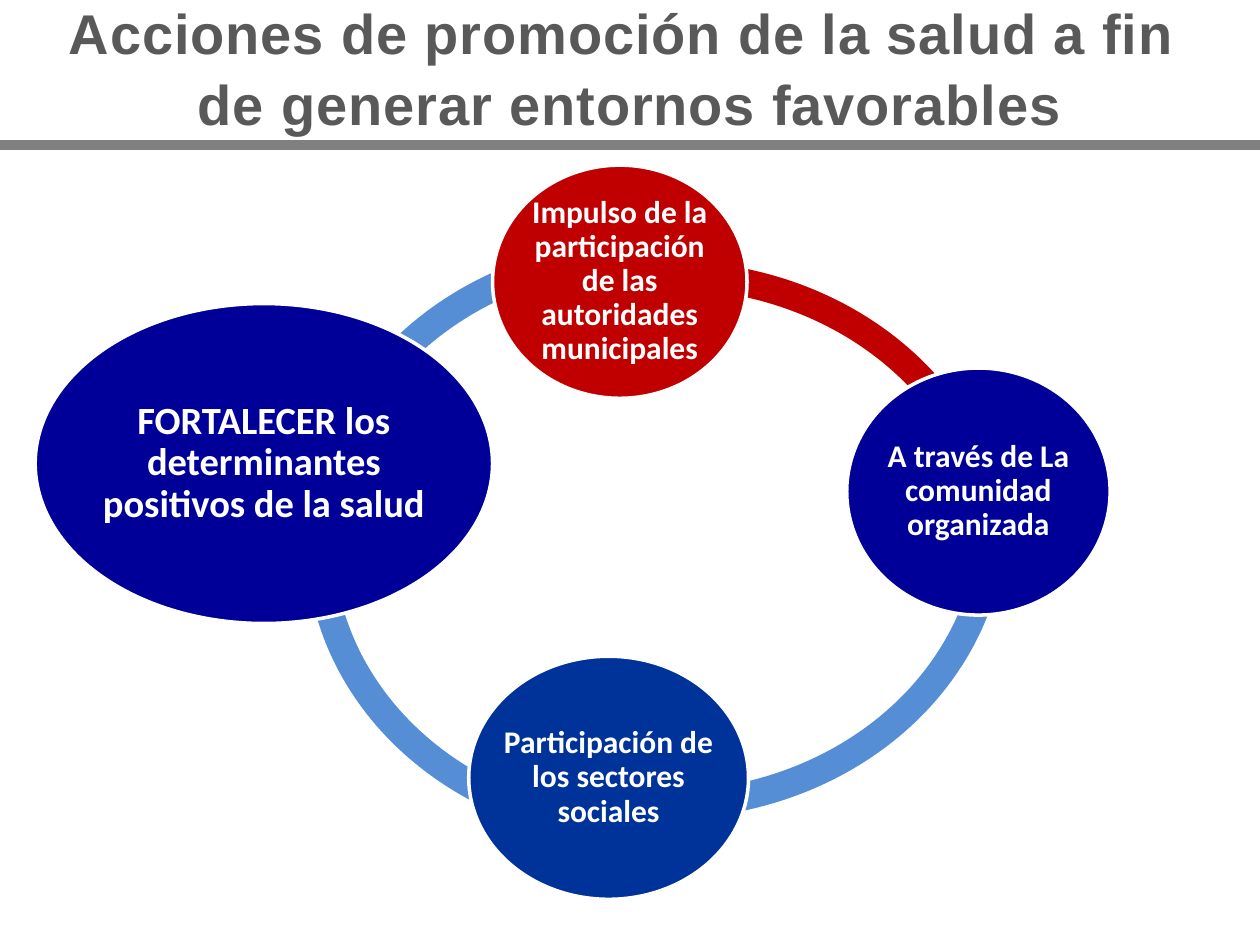
import lxml.etree
import pptx
import pptx.dml.color
import pptx.enum.shapes
import pptx.enum.text
import pptx.oxml.ns
import pptx.util

Cm, Pt = pptx.util.Cm, pptx.util.Pt
SHAPE = pptx.enum.shapes.MSO_SHAPE

THEME = {
    "white": "FFFFFF", "title": "595959", "rule": "808080",
    "sky": "558ED5", "red": "C00000", "navy": "000099", "blue": "003399",
    "title_font": "Arial", "title_size": 32,
    "node_font": "Calibri", "large": 22, "normal": 18,
}

TITLE = ["Acciones de promoción de la salud a fin ", "de generar entornos favorables"]

# Left and top in cm, start and end in degrees clockwise from the right, colour
ARCS = [
    (6.17, 4.83, 121.64, 256.49, "sky"),
    (6.5, 4.32, 0.25, 105.04, "sky"),
    (6.58, 5.26, 271.26, 352.1, "red"),
]
ARC_SIZE = (13.79, 12.19)
ARC_THICKNESS = 0.046

# Text, box (left, top, width, height in cm), colour, type size
NODES = [
    ("FORTALECER los determinantes positivos de la salud",
     (0.71, 6.12, 9.22, 6.45), "navy", "large"),
    ("Impulso de la participación de las autoridades municipales",
     (9.93, 3.33, 5.13, 4.7), "red", "normal"),
    ("A través de La comunidad organizada",
     (17.07, 7.42, 5.31, 4.98), "navy", "normal"),
    ("Participación de los sectores sociales",
     (9.45, 13.23, 5.64, 4.9), "blue", "normal"),
]
NODE_MARGIN = -0.2  # lets text run slightly past the oval's inscribed rectangle


def color(name):
    return pptx.dml.color.RGBColor.from_string(THEME[name])


def add_filled(slide, preset, box, fill, outline=None, outline_width=0):
    shape = slide.shapes.add_shape(preset, *(Cm(length) for length in box))
    shape.shadow.inherit = False
    shape.fill.solid()
    shape.fill.fore_color.rgb = color(fill)
    if outline:
        shape.line.color.rgb = color(outline)
        shape.line.width = Pt(outline_width)
    else:
        shape.line.fill.background()
    return shape


def style(paragraph, font_name, size, font_color):
    paragraph.alignment = pptx.enum.text.PP_ALIGN.CENTER
    font = paragraph.font
    font.name, font.size, font.bold = font_name, Pt(size), True
    font.color.rgb = color(font_color)


def add_arc(slide, left, top, start, end, fill):
    arc = add_filled(slide, SHAPE.BLOCK_ARC, (left, top, *ARC_SIZE), fill)
    # Angles are stored in 60000ths of a degree, adjustments in 100000ths
    for index, value in enumerate((start * 0.6, end * 0.6, ARC_THICKNESS)):
        arc.adjustments[index] = value


def add_node(slide, text, box, fill, size):
    frame = add_filled(slide, SHAPE.OVAL, box, fill, "white", 2).text_frame
    frame.word_wrap = True
    frame.vertical_anchor = pptx.enum.text.MSO_ANCHOR.MIDDLE
    frame.margin_left = frame.margin_right = Cm(NODE_MARGIN)
    frame.margin_top = frame.margin_bottom = Cm(NODE_MARGIN)
    paragraph = frame.paragraphs[0]
    paragraph.text = text
    paragraph.line_spacing = 0.9
    style(paragraph, THEME["node_font"], THEME[size], "white")


def add_title(slide):
    band = add_filled(slide, SHAPE.RECTANGLE, (0, -0.13, 25.4, 3), "white", "white", 0.75)
    frame = band.text_frame
    frame.word_wrap = True
    frame.vertical_anchor = pptx.enum.text.MSO_ANCHOR.MIDDLE
    frame.text = "\n".join(TITLE)
    for paragraph in frame.paragraphs:
        style(paragraph, THEME["title_font"], THEME["title_size"], "title")
        for run in paragraph.runs:
            run._r.get_or_add_rPr().set("spc", "50")
    frame.paragraphs[1].space_before = Pt(2)


def add_rule(slide):
    rule = slide.shapes.add_connector(
        pptx.enum.shapes.MSO_CONNECTOR.STRAIGHT, 0, Cm(2.92), Cm(25.4), Cm(2.92))
    rule.line.color.rgb = color("rule")
    rule.line.width = Pt(6)
    lxml.etree.SubElement(rule._element.spPr, pptx.oxml.ns.qn("a:effectLst"))


def main():
    deck = pptx.Presentation()
    deck.slide_width, deck.slide_height = Cm(25.4), Cm(19.05)
    slide = deck.slides.add_slide(deck.slide_layouts[6])
    for arc in ARCS:
        add_arc(slide, *arc)
    for node in NODES:
        add_node(slide, *node)
    add_title(slide)
    add_rule(slide)
    deck.save("out.pptx")


if __name__ == "__main__":
    main()
